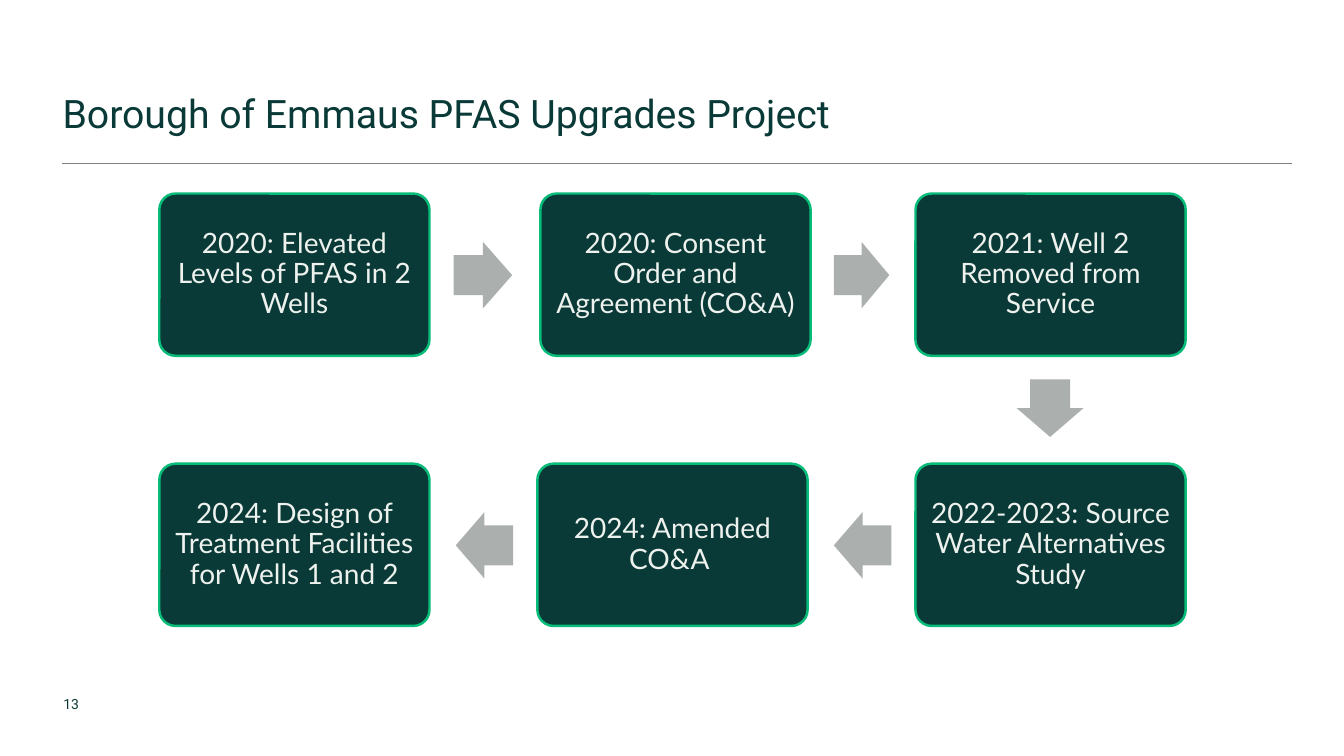
import pptx
import pptx.util
import pptx.dml.color
import pptx.enum.shapes
import pptx.enum.text
import pptx.oxml.ns
from lxml import etree

RGBColor = pptx.dml.color.RGBColor
SHAPE = pptx.enum.shapes.MSO_SHAPE
ANCHOR = pptx.enum.text.MSO_ANCHOR
ALIGN = pptx.enum.text.PP_ALIGN
Pt = pptx.util.Pt

DARK = RGBColor(0x0A, 0x3A, 0x37)
GREEN = RGBColor(0x07, 0xBB, 0x78)
PALE = RGBColor(0xEE, 0xF2, 0xEE)
ARROW_GREY = RGBColor(0xAB, 0xAF, 0xAE)
RULE_GREY = RGBColor(0x80, 0x80, 0x80)

STEP_W, STEP_H = 268, 161
ARROW_H = 66

# Each step: text, column left, row top (relative to the flow area)
STEPS = [
    ("2020: Elevated Levels of PFAS in 2 Wells", 0, 0),
    ("2020: Consent Order and Agreement (CO&A)", 378, 0),
    ("2021: Well 2 Removed from Service", 750, 0),
    ("2022-2023: Source Water Alternatives Study", 750, 268),
    ("2024: Amended CO&A ", 375, 268),
    ("2024: Design of Treatment Facilities for Wells 1 and 2", 0, 268),
]
# Each arrow: left, top, width, rotation (relative to the flow area)
ARROWS = [
    (292, 48, 58, 0),
    (669, 48, 55, 0),
    (855, 180, 57, 90),
    (669, 316, 57, 180),
    (294, 316, 57, 180),
]


def px(n):
    """100 px to the inch."""
    return pptx.util.Emu(n * 9144)


def set_insets(tf, left, top, right, bottom):
    tf.margin_left, tf.margin_top = px(left), px(top)
    tf.margin_right, tf.margin_bottom = px(right), px(bottom)


def add_text(tf, text, font, size, color, align=ALIGN.LEFT, spacing=None):
    p = tf.paragraphs[0]
    p.alignment = align
    p.line_spacing = spacing
    r = p.add_run()
    r.text = text
    r.font.name, r.font.size = font, Pt(size)
    r.font.color.rgb = color


def add_header(s, left, top, width, height):
    # Title
    title = s.shapes.title
    title.left, title.top = px(left), px(top)
    title.width, title.height = px(width), px(height)
    tf = title.text_frame
    tf.word_wrap = True
    tf.auto_size = pptx.enum.text.MSO_AUTO_SIZE.NONE
    tf.vertical_anchor = ANCHOR.BOTTOM
    set_insets(tf, 0, 5, 10, 5)
    add_text(tf, "Borough of Emmaus PFAS Upgrades Project", "Roboto", 28, DARK,
             spacing=Pt(30))
    # Rule under the title
    y = px(top + height + 22)
    rule = s.shapes.add_connector(pptx.enum.shapes.MSO_CONNECTOR.STRAIGHT,
                                  px(left), y, px(left + width), y)
    rule.line.color.rgb = RULE_GREY
    rule.line.width = Pt(0.75)
    etree.SubElement(rule._element.spPr, pptx.oxml.ns.qn("a:effectLst"))


def add_step(s, left, top, text):
    sp = s.shapes.add_shape(SHAPE.ROUNDED_RECTANGLE,
                            px(left), px(top), px(STEP_W), px(STEP_H))
    sp.adjustments[0] = 0.1
    sp.shadow.inherit = False
    sp.fill.solid()
    sp.fill.fore_color.rgb = DARK
    sp.line.color.rgb = GREEN
    sp.line.width = Pt(1.75)
    tf = sp.text_frame
    tf.word_wrap = True
    tf.vertical_anchor = ANCHOR.MIDDLE
    set_insets(tf, 8, 8, 8, 8)
    add_text(tf, text, "Lato", 20, PALE, ALIGN.CENTER, 0.9)


def add_arrow(s, left, top, width, rotation):
    sp = s.shapes.add_shape(SHAPE.RIGHT_ARROW,
                            px(left), px(top), px(width), px(ARROW_H))
    sp.adjustments[0], sp.adjustments[1] = 0.6, 0.5
    sp.rotation = rotation
    sp.shadow.inherit = False
    sp.fill.solid()
    sp.fill.fore_color.rgb = ARROW_GREY
    sp.line.fill.background()


def add_flow(s, left, top):
    for text, x, y in STEPS:
        add_step(s, left + x, top + y, text)
    for x, y, width, rotation in ARROWS:
        add_arrow(s, left + x, top + y, width, rotation)


def add_page_number(s, left, top, width, height):
    sp = s.shapes.add_textbox(px(left), px(top), px(width), px(height))
    sp.text_frame.word_wrap = True
    add_text(sp.text_frame, "13", "Roboto", 10, DARK)


def main():
    prs = pptx.Presentation()
    prs.slide_width, prs.slide_height = px(1333), px(750)
    s = prs.slides.add_slide(prs.slide_layouts[5])
    add_header(s, 62, 53, 1219, 87)
    add_flow(s, 158, 192)
    add_page_number(s, 53, 685, 52, 27)
    prs.save("out.pptx")


if __name__ == "__main__":
    main()
